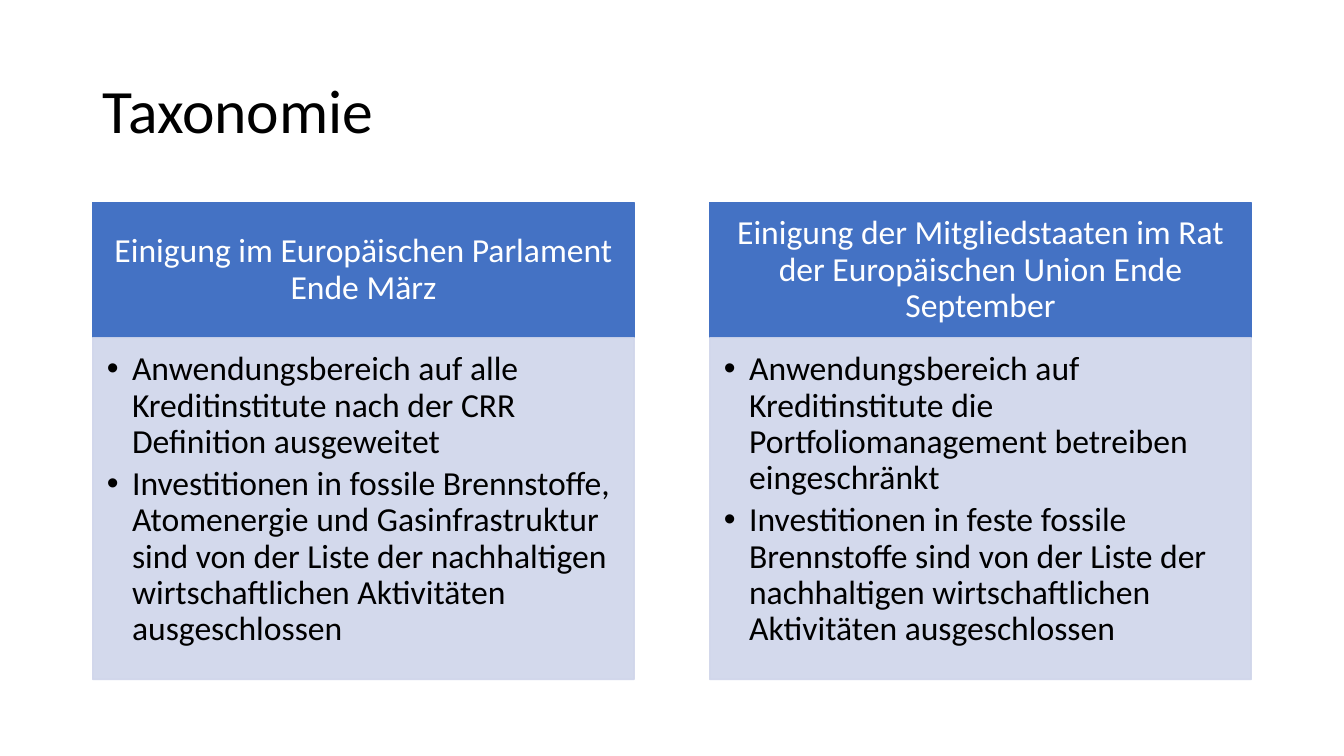
from dataclasses import dataclass

from lxml import etree
from pptx import Presentation
from pptx.dml.color import RGBColor
from pptx.enum.shapes import MSO_SHAPE
from pptx.enum.text import MSO_ANCHOR, MSO_AUTO_SIZE, PP_ALIGN
from pptx.oxml.ns import qn
from pptx.util import Inches, Pt


@dataclass(frozen=True)
class Theme:
    font: str = "Calibri"
    title_size: int = 44
    text_size: int = 24
    dark: RGBColor = RGBColor(0x00, 0x00, 0x00)
    light: RGBColor = RGBColor(0xFF, 0xFF, 0xFF)
    header_fill: RGBColor = RGBColor(0x44, 0x72, 0xC4)
    body_fill: RGBColor = RGBColor(0xCF, 0xD5, 0xEA)
    body_opacity: int = 90


THEME = Theme()

LEFT, COLUMN_STEP, COLUMN_WIDTH = 0.92, 6.12, 5.37
HEADER_TOP, HEADER_HEIGHT, BODY_HEIGHT = 2.01, 1.34, 3.39
BULLET_INDENT = 0.25

COLUMNS = [
    ("Einigung im Europäischen Parlament Ende März",
     ["Anwendungsbereich auf alle Kreditinstitute nach der CRR Definition ausgeweitet",
      "Investitionen in fossile Brennstoffe, Atomenergie und Gasinfrastruktur sind von "
      "der Liste der nachhaltigen wirtschaftlichen Aktivitäten ausgeschlossen"]),
    ("Einigung der Mitgliedstaaten im Rat der Europäischen Union Ende September",
     ["Anwendungsbereich auf Kreditinstitute die Portfoliomanagement betreiben eingeschränkt",
      "Investitionen in feste fossile Brennstoffe sind von der Liste der nachhaltigen "
      "wirtschaftlichen Aktivitäten ausgeschlossen"]),
]


def fill_text(shape, texts, size, color, align, anchor, insets):
    """Write one paragraph per text; insets run left, top, right, bottom."""
    frame = shape.text_frame
    frame.text = "\n".join(texts)
    frame_format = {"word_wrap": True, "auto_size": MSO_AUTO_SIZE.NONE,
                    "vertical_anchor": anchor}
    for side, inset in zip(("left", "top", "right", "bottom"), insets):
        frame_format[f"margin_{side}"] = Inches(inset)
    for name, value in frame_format.items():
        setattr(frame, name, value)
    for para in frame.paragraphs:
        para.alignment = align
        para.line_spacing = 0.9
        font = para.runs[0].font
        for name, value in {"name": THEME.font, "size": Pt(size)}.items():
            setattr(font, name, value)
        font.color.rgb = color


def add_panel(page, left, top, height, color, opacity=100):
    panel = page.shapes.add_shape(MSO_SHAPE.RECTANGLE, Inches(left), Inches(top),
                                  Inches(COLUMN_WIDTH), Inches(height))
    panel.shadow.inherit = False
    panel.line.width = Pt(1)
    for paint in (panel.fill, panel.line.fill):
        paint.solid()
        paint.fore_color.rgb = color
    if opacity < 100:
        for tone in panel.element.spPr.iter(qn("a:srgbClr")):
            etree.SubElement(tone, qn("a:alpha"), val=str(opacity * 1000))
    return panel


deck = Presentation()
deck.slide_width, deck.slide_height = Inches(13.33), Inches(7.5)
page = deck.slides.add_slide(deck.slide_layouts[5])

title = page.shapes.title
title_place = {"left": LEFT, "top": 0.4, "width": 11.5, "height": 1.45}
for name, value in title_place.items():
    setattr(title, name, Inches(value))
fill_text(title, ["Taxonomie"], THEME.title_size, THEME.dark,
          PP_ALIGN.LEFT, MSO_ANCHOR.MIDDLE, (0.1, 0.05, 0.1, 0.05))

for column, (heading, points) in enumerate(COLUMNS):
    left = LEFT + column * COLUMN_STEP

    header = add_panel(page, left, HEADER_TOP, HEADER_HEIGHT, THEME.header_fill)
    fill_text(header, [heading], THEME.text_size, THEME.light,
              PP_ALIGN.CENTER, MSO_ANCHOR.MIDDLE, (0.19, 0.11, 0.19, 0.11))

    body = add_panel(page, left, HEADER_TOP + HEADER_HEIGHT, BODY_HEIGHT,
                     THEME.body_fill, THEME.body_opacity)
    fill_text(body, points, THEME.text_size, THEME.dark,
              PP_ALIGN.LEFT, MSO_ANCHOR.TOP, (0.14, 0.14, 0.19, 0.21))
    for para in body.text_frame.paragraphs:
        para.space_after = Pt(4.3)
        layout = para._p.get_or_add_pPr()
        layout.set("marL", str(Inches(BULLET_INDENT)))
        layout.set("indent", str(-Inches(BULLET_INDENT)))
        etree.SubElement(layout, qn("a:buFont"), typeface="Arial")
        etree.SubElement(layout, qn("a:buChar"), char="•")

deck.save("out.pptx")
